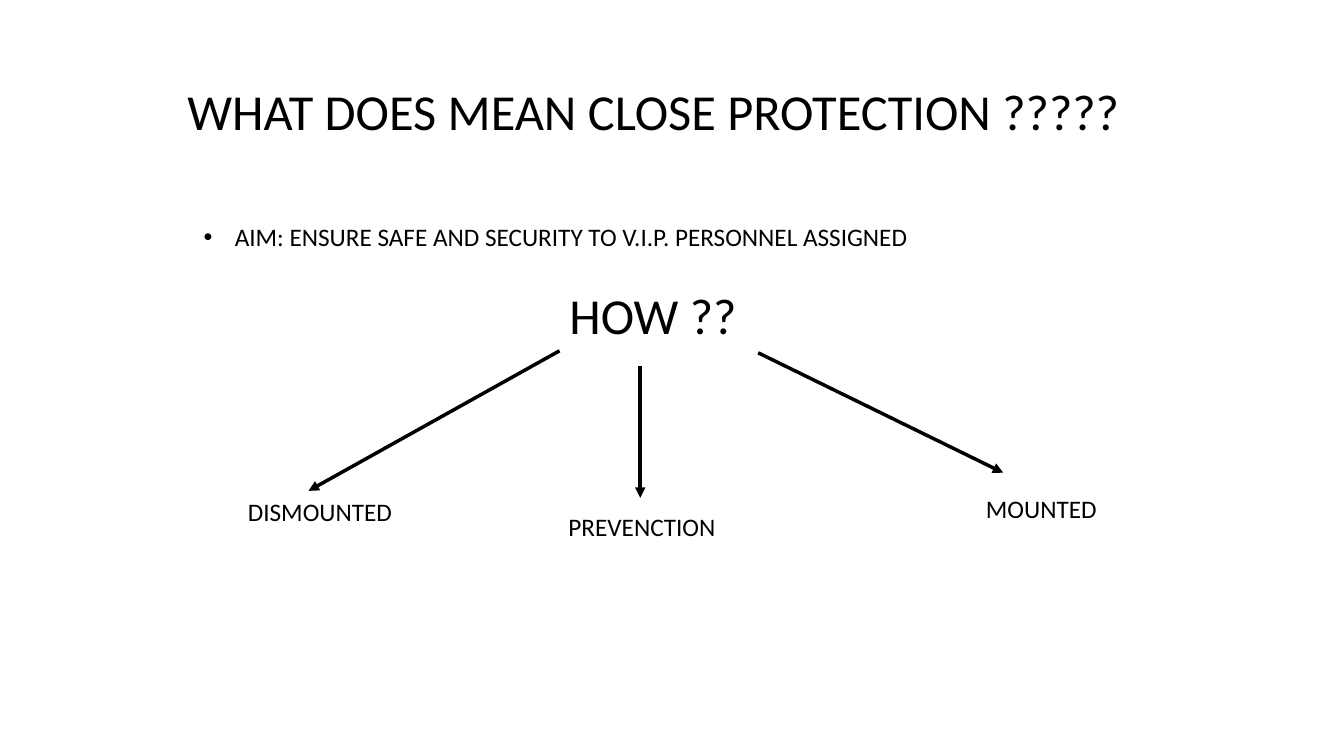
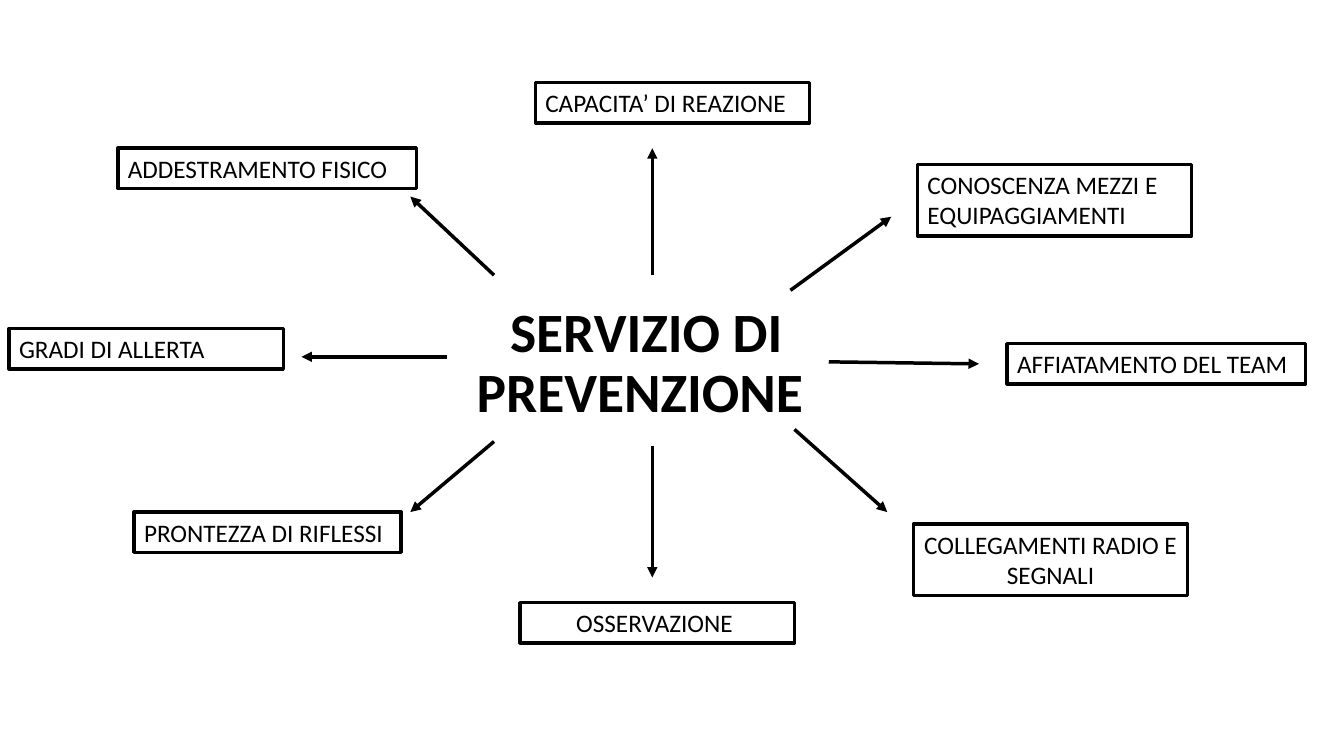
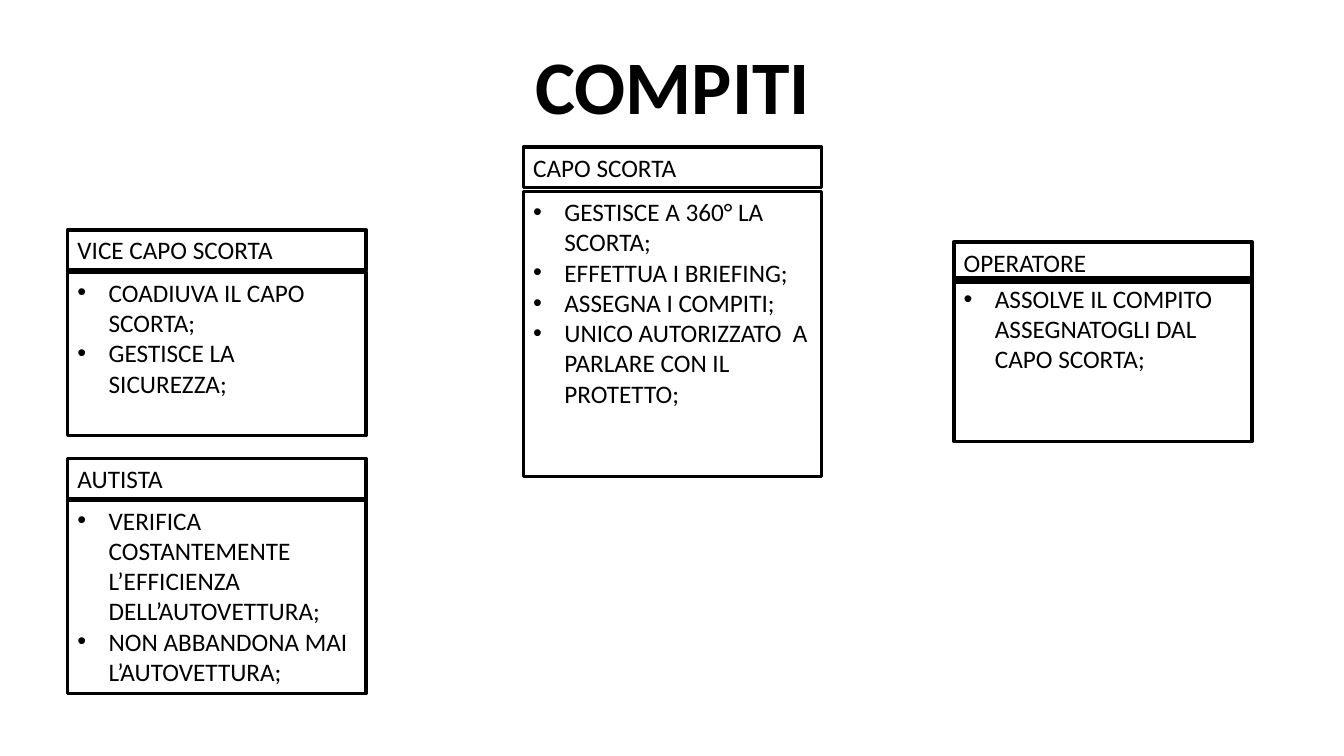
from dataclasses import dataclass

from lxml.etree import SubElement
from pptx import Presentation
from pptx.dml.color import RGBColor
from pptx.enum.shapes import MSO_CONNECTOR as Connector, MSO_SHAPE as Shape
from pptx.enum.text import MSO_ANCHOR as Anchor, PP_ALIGN as Align
from pptx.oxml.ns import qn
from pptx.util import Inches, Pt


@dataclass(frozen=True)
class Theme:
    font: str = "Calibri"
    ink: RGBColor = RGBColor(0, 0, 0)
    body: float = 18
    question: float = 36
    hub: float = 39.6
    title: float = 54
    line: float = 2.5
    title_spacing: float = 0.9
    hanging: float = 0.31


class Board:
    """Draws on the current page; lengths are cells of a square grid, 75 rows high."""

    ROWS = 75
    LINE_ROWS = 4
    TWO_LINE_ROWS = 7.1
    CARD_COLUMNS = 29.6

    def __init__(self, theme):
        self.theme = theme
        self.deck = Presentation()
        self.deck.slide_width, self.deck.slide_height = Inches(13.33), Inches(7.5)
        self.cell = self.deck.slide_height / self.ROWS
        self.page = None

    def new_page(self):
        self.page = self.deck.slides.add_slide(self.deck.slide_layouts[6])

    def to_emu(self, *cells):
        return [round(cell * self.cell) for cell in cells]

    def set_text(self, shape, lines, size, align=Align.LEFT, anchor=Anchor.TOP,
                 bold=False, spacing=None, bullets=False):
        frame = shape.text_frame
        frame.word_wrap = True
        frame.vertical_anchor = anchor
        frame.text = "\n".join(lines)
        for para in frame.paragraphs:
            para.alignment = align
            if spacing:
                para.line_spacing = spacing
            if bullets:
                self.add_bullet(para)
            font = para.font
            font.name, font.size, font.bold = self.theme.font, Pt(size), bold
            font.color.rgb = self.theme.ink

    def add_bullet(self, para):
        props = para._p.get_or_add_pPr()
        indent = Inches(self.theme.hanging)
        props.set("marL", str(indent))
        props.set("indent", str(-indent))
        SubElement(props, qn("a:buFont")).set("typeface", "Arial")
        SubElement(props, qn("a:buChar")).set("char", "•")

    def text(self, left, top, width, height, words, size, **style):
        box = self.page.shapes.add_textbox(*self.to_emu(left, top, width, height))
        self.set_text(box, [words], size, **style)

    def label(self, left, top, width, words, **style):
        self.text(left, top, width, self.LINE_ROWS, words, self.theme.body, **style)

    def title(self, left, top, width, height, words, size):
        self.text(left, top, width, height, words, size, align=Align.CENTER,
                  anchor=Anchor.MIDDLE, bold=True, spacing=self.theme.title_spacing)

    def frame(self, left, top, width, height, lines, **style):
        box = self.page.shapes.add_shape(
            Shape.RECTANGLE, *self.to_emu(left, top, width, height))
        box.shadow.inherit = False
        box.fill.background()
        self.ink_line(box)
        self.set_text(box, lines, self.theme.body, **style)

    def card(self, left, top, body_top, body_height, heading, duties):
        self.frame(left, top, self.CARD_COLUMNS, self.LINE_ROWS, [heading])
        self.frame(left, body_top, self.CARD_COLUMNS, body_height, duties, bullets=True)

    def arrow(self, start, end):
        line = self.page.shapes.add_connector(
            Connector.STRAIGHT, *self.to_emu(*start, *end))
        self.ink_line(line)
        SubElement(line.line._get_or_add_ln(), qn("a:tailEnd")).set("type", "triangle")
        SubElement(line._element.spPr, qn("a:effectLst"))

    def ink_line(self, shape):
        shape.line.color.rgb = self.theme.ink
        shape.line.width = Pt(self.theme.line)


def draw_close_protection(board):
    size = board.theme.question
    board.new_page()
    board.text(17.6, 7.5, 98.1, 7.1, "WHAT DOES MEAN CLOSE PROTECTION ?????", size)
    board.label(19.2, 21.5, 102.8,
                "AIM: ENSURE SAFE AND SECURITY TO V.I.P. PERSONNEL ASSIGNED", bullets=True)
    board.text(55.5, 27.7, 25.4, 7.1, "HOW ??", size)
    answers = [
        ("DISMOUNTED", 23.6, 48.7, Align.LEFT, (55.5, 34.8), (30.6, 48.7)),
        ("PREVENCTION ", 47.7, 50.2, Align.CENTER, (63.5, 36.3), (63.5, 49.4)),
        ("MOUNTED", 96.8, 48.4, Align.LEFT, (75.2, 35), (99.5, 46.9)),
    ]
    for words, left, top, align, start, end in answers:
        board.arrow(start, end)
        board.label(left, top, 32.5, words, align=align)


def draw_prevention_service(board):
    one, two = board.LINE_ROWS, board.TWO_LINE_ROWS
    board.new_page()
    board.title(36.3, 32.6, 55.6, 7.1, "SERVIZIO DI PREVENZIONE ", board.theme.hub)
    spokes = [
        (["CAPACITA’ DI REAZIONE"], (53.1, 8.2, 27.2, one), Align.LEFT,
         (64.7, 27.3), (64.7, 14.7)),
        (["CONOSCENZA MEZZI E", "EQUIPAGGIAMENTI"], (91, 16.3, 27.2, two), Align.LEFT,
         (78.4, 28.8), (88.4, 21.5)),
        (["AFFIATAMENTO DEL TEAM"], (99.9, 34.1, 29.6, one), Align.LEFT,
         (82.2, 35.9), (97.1, 36.1)),
        (["COLLEGAMENTI RADIO E SEGNALI"], (90.6, 52, 27.2, two), Align.CENTER,
         (78.8, 42.6), (88, 50.8)),
        (["OSSERVAZIONE "], (51.6, 59.8, 27.2, one), Align.CENTER,
         (64.7, 44.2), (64.7, 57.3)),
        (["PRONTEZZA DI RIFLESSI"], (13.3, 50.8, 26.5, one), Align.LEFT,
         (49, 43.8), (40.7, 50.8)),
        (["GRADI DI ALLERTA"], (0.9, 32.6, 27.2, one), Align.LEFT,
         (44.3, 35.4), (29.9, 35.4)),
        (["ADDESTRAMENTO FISICO"], (11.7, 14.7, 29.6, one), Align.LEFT,
         (49, 27.3), (40.7, 19.5)),
    ]
    for lines, place, align, start, end in spokes:
        board.arrow(start, end)
        board.frame(*place, lines, align=align)


def draw_duties(board):
    left, middle, right = 6.7, 51.9, 94.6
    board.new_page()
    board.title(9.2, 4, 115, 9.9, "COMPITI", board.theme.title)
    board.card(middle, 14.6, 19, 28.3, "CAPO SCORTA", [
        "GESTISCE A 360° LA SCORTA;",
        "EFFETTUA I BRIEFING;",
        "ASSEGNA I COMPITI;",
        "UNICO AUTORIZZATO  A PARLARE CON IL PROTETTO;",
    ])
    board.card(left, 22.8, 27, 16.2, "VICE CAPO SCORTA", [
        "COADIUVA IL CAPO SCORTA;",
        "GESTISCE LA SICUREZZA;",
    ])
    board.card(left, 45.5, 49.6, 19.2, "AUTISTA", [
        "VERIFICA COSTANTEMENTE L’EFFICIENZA DELL’AUTOVETTURA;",
        "NON ABBANDONA MAI L’AUTOVETTURA;",
    ])
    board.card(right, 24, 27.6, 16.2, "OPERATORE", [
        "ASSOLVE IL COMPITO ASSEGNATOGLI DAL CAPO SCORTA;",
    ])


def main():
    board = Board(Theme())
    draw_close_protection(board)
    draw_prevention_service(board)
    draw_duties(board)
    board.deck.save("out.pptx")


if __name__ == "__main__":
    main()
